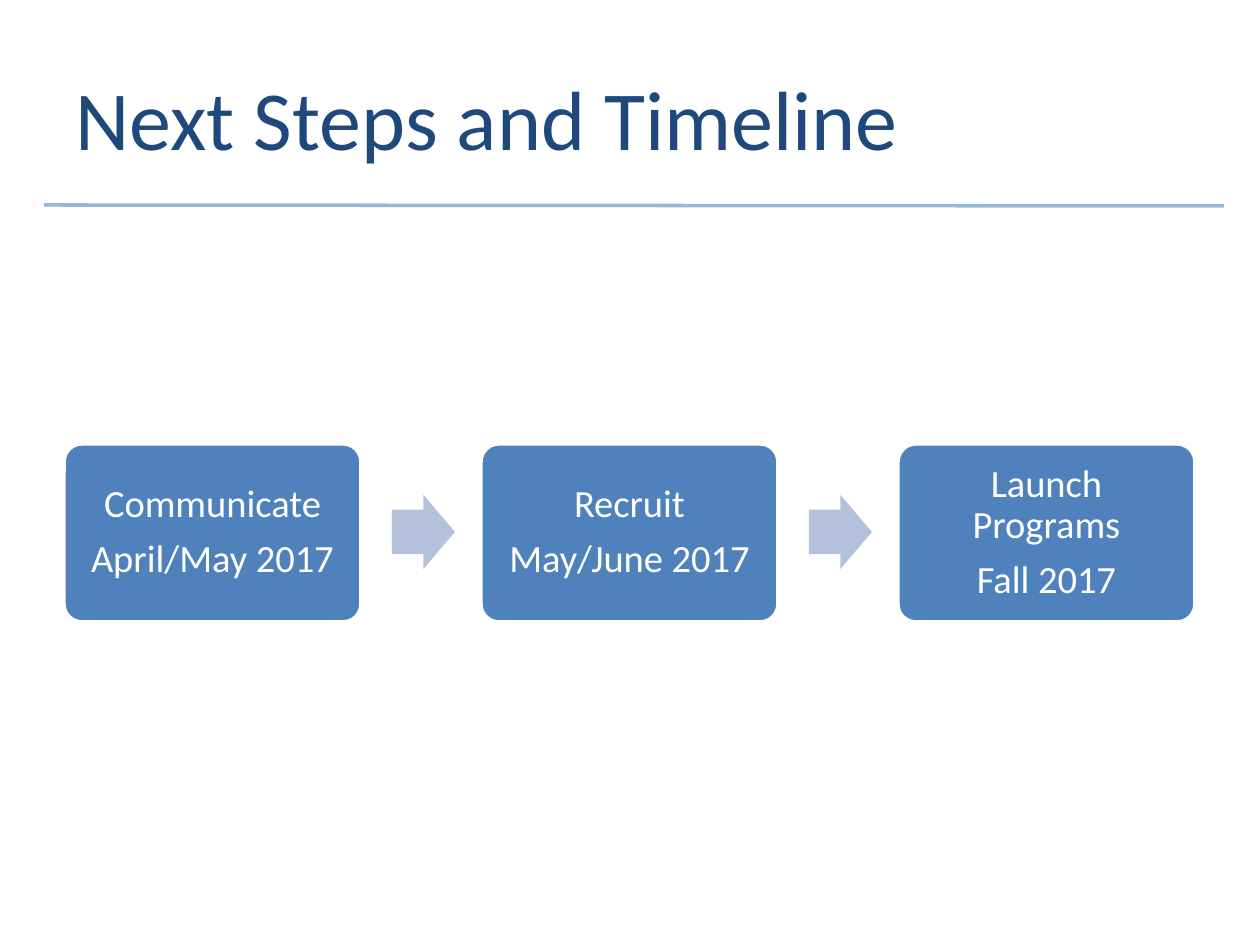
"""Build the Next Steps and Timeline slide."""
from lxml.etree import SubElement
from pptx import Presentation
from pptx.dml.color import RGBColor
from pptx.enum.shapes import MSO_CONNECTOR, MSO_SHAPE
from pptx.enum.text import MSO_ANCHOR, PP_ALIGN
from pptx.oxml.ns import qn
from pptx.util import Inches, Pt

PIXEL = Inches(1) // 126
STEP_PITCH = 417
STEPS = [
    ("Communicate", "April/May 2017"),
    ("Recruit", "May/June 2017"),
    ("Launch Programs", "Fall 2017"),
]


def color(value):
    return RGBColor.from_string(value)


def add_shape(kind, left, top, width, height, fill):
    shape = slide.shapes.add_shape(
        kind, left * PIXEL, top * PIXEL, width * PIXEL, height * PIXEL
    )
    shape.shadow.inherit = False
    shape.fill.solid()
    shape.fill.fore_color.rgb = color(fill)
    return shape


presentation = Presentation()
presentation.slide_width = Inches(10)
presentation.slide_height = Inches(7.5)
slide = presentation.slides.add_slide(presentation.slide_layouts[5])

rule = slide.shapes.add_connector(
    MSO_CONNECTOR.STRAIGHT, 44 * PIXEL, 205 * PIXEL, 1224 * PIXEL, 206 * PIXEL
)
rule.line.color.rgb = color("96B8D8")
rule.line.width = Pt(2)
SubElement(rule._element.spPr, qn("a:effectLst"))

title = slide.shapes.title
title.left, title.top = 63 * PIXEL, 38 * PIXEL
title.width, title.height = 1134 * PIXEL, 158 * PIXEL
title.text_frame.text = "Next Steps and Timeline"
title.text_frame.vertical_anchor = MSO_ANCHOR.MIDDLE
heading = title.text_frame.paragraphs[0]
heading.alignment = PP_ALIGN.LEFT
heading_font = heading.runs[0].font
heading_font.name = "Calibri"
heading_font.size = Pt(48)
heading_font.color.rgb = color("1F497D")

for index, lines in enumerate(STEPS):
    offset = index * STEP_PITCH
    box = add_shape(
        MSO_SHAPE.ROUNDED_RECTANGLE, 64 + offset, 444, 297, 178, "4F81BD"
    )
    box.adjustments[0] = 0.1
    box.line.color.rgb = color("FFFFFF")
    box.line.width = Pt(2)

    frame = box.text_frame
    frame.word_wrap = True
    frame.vertical_anchor = MSO_ANCHOR.MIDDLE
    frame.margin_left = frame.margin_right = 11 * PIXEL
    frame.margin_top = frame.margin_bottom = 11 * PIXEL
    frame.text = "\n".join(lines)
    for paragraph in frame.paragraphs:
        paragraph.alignment = PP_ALIGN.CENTER
        paragraph.line_spacing = 0.9
        paragraph.space_after = Pt(7.7)
        font = paragraph.runs[0].font
        font.name = "Calibri"
        font.size = Pt(22)
        font.color.rgb = color("FFFFFF")

    if index < len(STEPS) - 1:
        arrow = add_shape(
            MSO_SHAPE.RIGHT_ARROW, 392 + offset, 495, 63, 74, "B3C1DB"
        )
        arrow.adjustments[0] = 0.6
        arrow.adjustments[1] = 0.5
        arrow.line.fill.background()

presentation.save("out.pptx")
